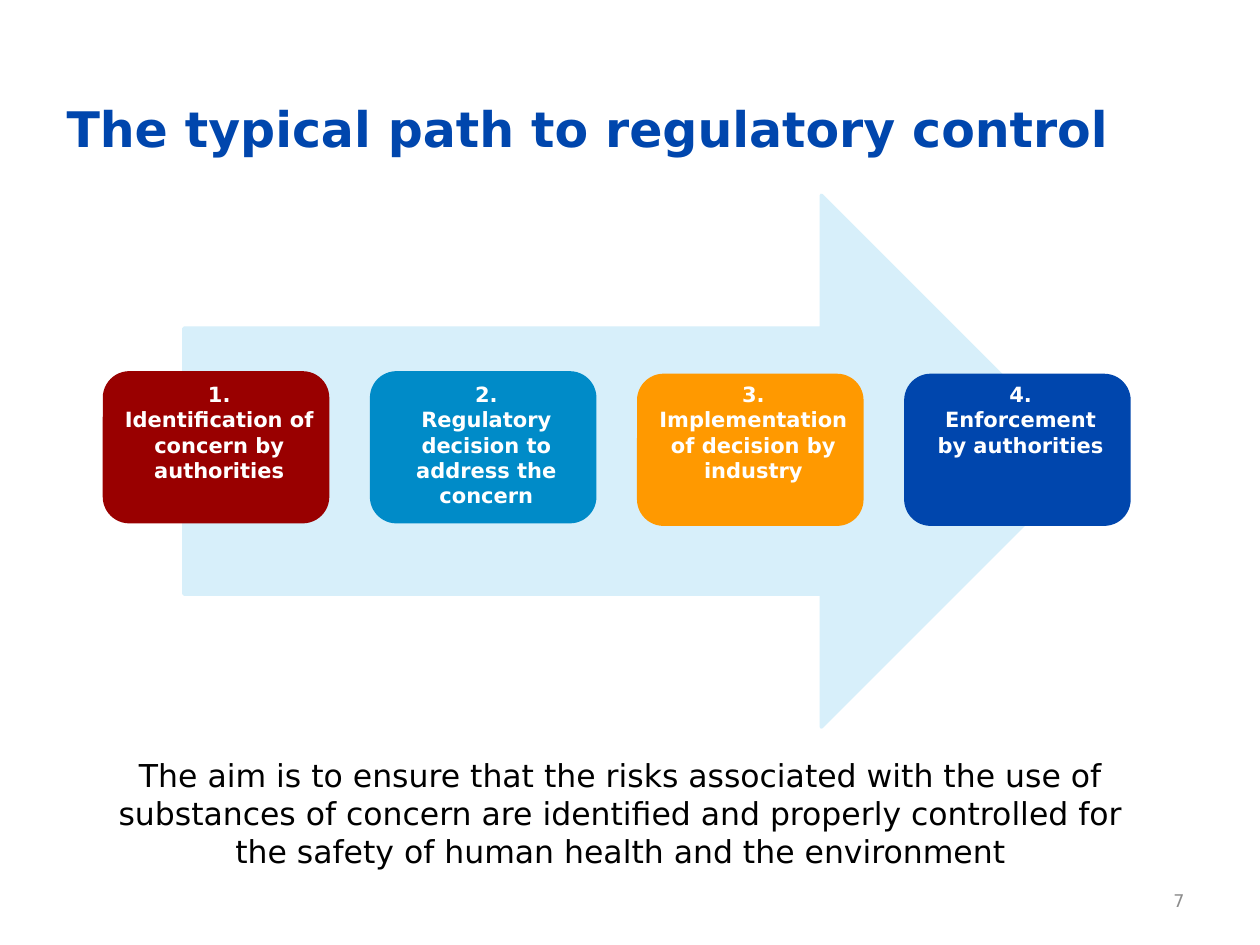
from lxml import etree
from pptx import Presentation
from pptx.dml.color import RGBColor
from pptx.enum import shapes, text
from pptx.util import Inches, Pt

THEME = {
    "font": "DejaVu Sans",
    "arrow": "D7EFFA",
    "outline": 2,
    "title": {"size": 28, "color": "0046AD", "bold": True},
    "body": {"size": 18, "color": "000000", "bold": False},
    "step": {"size": 12, "color": "FFFFFF", "bold": True},
    "number": {"size": 10, "color": "8C8C8C", "bold": False},
}

TITLE = "The typical path to regulatory control"
AIM = ("The aim is to ensure that the risks associated with the use of substances "
       "of concern are identified and properly controlled for the safety of human "
       "health and the environment")
PAGE_NUMBER = "7"

# Each step: colour, card top, label width, label height, paragraphs.
# The first paragraph follows the step number after a line break.
STEPS = [
    ("990000", 2.96, 1.81, 0.91, ["Identification of concern by authorities"]),
    ("008BC8", 2.96, 1.81, 1.11, ["Regulatory decision to address the concern"]),
    ("FF9900", 2.98, 2.13, 0.91, ["Implementation", "of decision by industry"]),
    ("0046AD", 2.98, 2.13, 0.71, ["Enforcement", "by authorities"]),
]
CARD_LEFT, CARD_PITCH = 0.83, 2.12
CARD_WIDTH, CARD_HEIGHT = 1.77, 1.18
LABEL_TOP, LABEL_CENTER = 2.98, 0.91  # centre is measured from the card's left edge

ALIGN = text.PP_ALIGN
ANCHOR = text.MSO_ANCHOR


def add_text(slide, box, paragraphs, style, align=ALIGN.LEFT, anchor=ANCHOR.TOP):
    """Add a text box; each paragraph is a list of lines."""
    frame = slide.shapes.add_textbox(*map(Inches, box)).text_frame
    frame.word_wrap = True
    frame.vertical_anchor = anchor
    for index, lines in enumerate(paragraphs):
        paragraph = frame.add_paragraph() if index else frame.paragraphs[0]
        paragraph.alignment = align
        for line_index, line in enumerate(lines):
            if line_index:
                paragraph.add_line_break()
            run = paragraph.add_run()
            run.text = line
            values = {"name": THEME["font"], "size": Pt(style["size"]),
                      "bold": style["bold"]}
            for name, value in values.items():
                setattr(run.font, name, value)
            run.font.color.rgb = RGBColor.from_string(style["color"])


def add_block(slide, kind, box, color):
    """Add a shape whose outline has the colour of its fill and round joins."""
    shape = slide.shapes.add_shape(kind, *map(Inches, box))
    shape.shadow.inherit = False
    shape.fill.solid()
    shape.line.fill.solid()
    for paint in (shape.fill.fore_color, shape.line.color):
        paint.rgb = RGBColor.from_string(color)
    shape.line.width = Pt(THEME["outline"])
    outline = shape.fill._xPr.find("{*}ln")
    namespace = etree.QName(outline).namespace
    etree.SubElement(outline, f"{{{namespace}}}round")


def add_steps(slide):
    lefts = [CARD_LEFT + index * CARD_PITCH for index in range(len(STEPS))]
    for left, (color, top, *_) in zip(lefts, STEPS):
        add_block(slide, shapes.MSO_SHAPE.ROUNDED_RECTANGLE,
                  (left, top, CARD_WIDTH, CARD_HEIGHT), color)
    for number, (left, step) in enumerate(zip(lefts, STEPS), start=1):
        _, _, width, height, (heading, *others) = step
        paragraphs = [[f"{number}.", heading]] + [[line] for line in others]
        add_text(slide, (left + LABEL_CENTER - width / 2, LABEL_TOP, width, height),
                 paragraphs, THEME["step"], ALIGN.CENTER)


def main():
    presentation = Presentation()
    presentation.slide_width, presentation.slide_height = Inches(10), Inches(7.5)
    slide = presentation.slides.add_slide(presentation.slide_layouts[6])

    add_text(slide, (0.43, 0.21, 9.21, 1.61), [[TITLE]], THEME["title"],
             anchor=ANCHOR.MIDDLE)
    add_text(slide, (7.17, 6.95, 2.33, 0.4), [[PAGE_NUMBER]], THEME["number"],
             ALIGN.RIGHT, ANCHOR.MIDDLE)
    add_text(slide, (0.75, 5.95, 8.35, 1.01), [[AIM]], THEME["body"], ALIGN.CENTER)
    add_block(slide, shapes.MSO_SHAPE.RIGHT_ARROW, (1.46, 1.55, 7.17, 4.22),
              THEME["arrow"])
    add_steps(slide)

    presentation.save("out.pptx")


if __name__ == "__main__":
    main()
